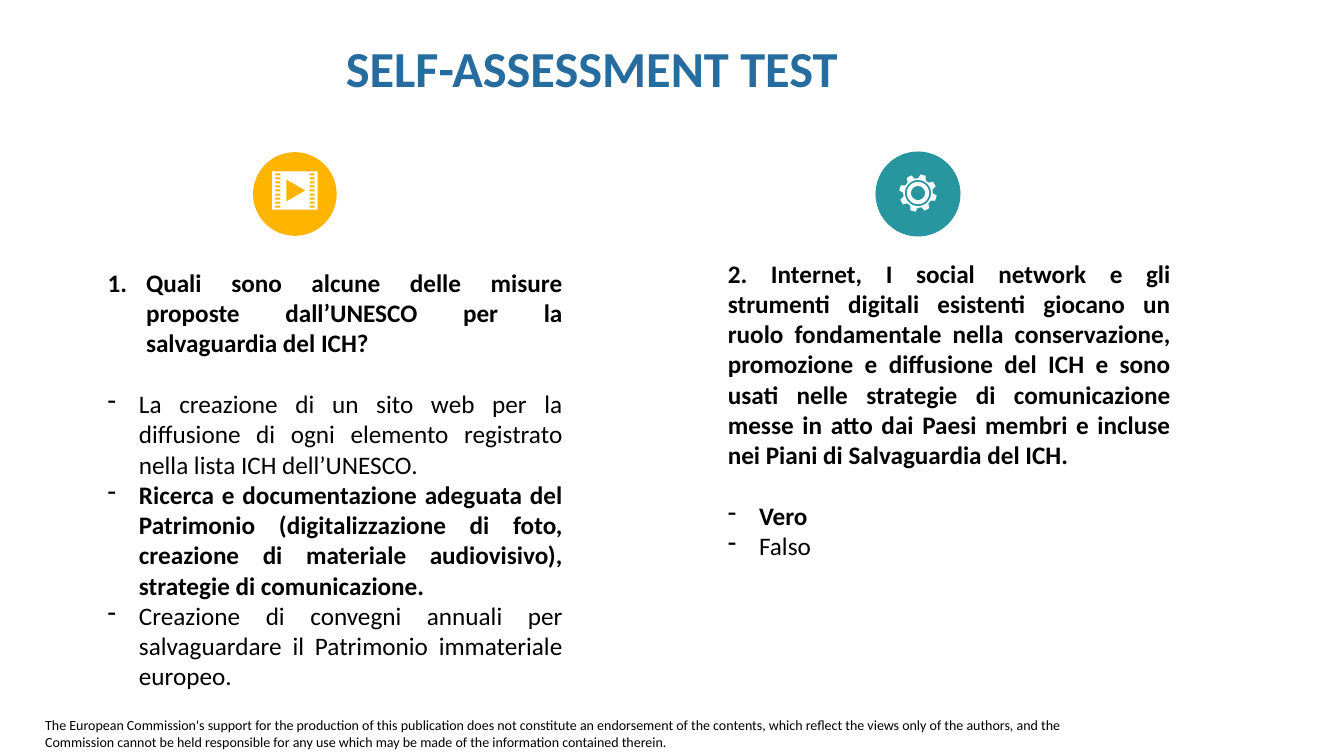
from math import cos, radians, sin

from lxml.etree import SubElement
from pptx import Presentation
from pptx.dml.color import RGBColor
from pptx.enum.shapes import MSO_SHAPE as Preset
from pptx.enum.text import MSO_ANCHOR as Anchor, MSO_AUTO_SIZE as AutoSize, PP_ALIGN as Align
from pptx.oxml.ns import qn
from pptx.util import Pt

PX = 9144
BLACK = RGBColor(0x00, 0x00, 0x00)
WHITE = RGBColor(0xFF, 0xFF, 0xFF)
BLUE = RGBColor(0x26, 0x6C, 0x9F)
AMBER = RGBColor(0xFF, 0xB5, 0x00)
TEAL = RGBColor(0x27, 0x96, 0x9F)

TITLE = "SELF-ASSESSMENT TEST"
DISCLAIMER = (
    "The European Commission's support for the production of this publication does not "
    "constitute an endorsement of the contents, which reflect the views only of the authors, "
    "and the Commission cannot be held responsible for any use which may be made of the "
    "information contained therein."
)
MEASURES_QUESTION = "Quali sono alcune delle misure proposte dall’UNESCO per la salvaguardia del ICH?"
MEASURES_ANSWERS = [
    ("La creazione di un sito web per la diffusione di ogni elemento registrato "
     "nella lista ICH dell’UNESCO.", False),
    ("Ricerca e documentazione adeguata del Patrimonio (digitalizzazione di foto, "
     "creazione di materiale audiovisivo), strategie di comunicazione.", True),
    ("Creazione di convegni annuali per salvaguardare il Patrimonio immateriale europeo.", False),
]
INTERNET_QUESTION = (
    "2. Internet, I social network e gli strumenti digitali esistenti giocano un ruolo "
    "fondamentale nella conservazione, promozione e diffusione del ICH e sono usati nelle "
    "strategie di comunicazione messe in atto dai Paesi membri e incluse nei Piani di "
    "Salvaguardia del ICH."
)
INTERNET_ANSWERS = [("Vero", True), ("Falso", False)]


def emu(*lengths):
    """Turn px lengths into EMU."""
    return [round(length * PX) for length in lengths]


def write(paragraph, text, size=18, bold=False, color=BLACK, align=Align.LEFT,
          bullet=None, indent=0, before=0, spacing=None):
    """Write one formatted paragraph, with a dash or a running number if asked."""
    if bullet:
        properties = paragraph._p.get_or_add_pPr()
        properties.set("marL", str(indent * PX))
        properties.set("indent", str(-indent * PX))
        if bullet == "number":
            SubElement(properties, qn("a:buAutoNum"), type="arabicPeriod")
        else:
            SubElement(properties, qn("a:buChar"), char=bullet)
    paragraph.alignment = align
    if before:
        paragraph.space_before = Pt(before)
    if spacing:
        paragraph.line_spacing = spacing
    run = paragraph.add_run()
    run.text = text
    font = run.font
    font.name, font.size, font.bold = "Calibri", Pt(size), bold
    font.color.rgb = color


def add_title(slide, box):
    """Place the heading in the title placeholder."""
    title = slide.shapes.title
    title.left, title.top, title.width, title.height = emu(*box)
    frame = title.text_frame
    frame.word_wrap = True
    frame.auto_size = AutoSize.NONE
    frame.vertical_anchor = Anchor.MIDDLE
    write(frame.paragraphs[0], TITLE, size=36, bold=True, color=BLUE, spacing=0.9)


def add_question(slide, box, question, answers, numbered=False):
    """Place a question with its dashed answers one blank line below."""
    frame = slide.shapes.add_textbox(*emu(*box)).text_frame
    frame.word_wrap = True
    write(frame.paragraphs[0], question, bold=True, align=Align.JUSTIFY,
          bullet="number" if numbered else None, indent=38)
    for index, (answer, correct) in enumerate(answers):
        write(frame.add_paragraph(), answer, bold=correct, align=Align.JUSTIFY,
              bullet="-", indent=31, before=0 if index else 22)


def add_disc(slide, box, color, outlined=False):
    """Place the coloured disc behind an icon."""
    disc = slide.shapes.add_shape(Preset.OVAL, *emu(*box))
    disc.shadow.inherit = False
    disc.fill.solid()
    disc.fill.fore_color.rgb = color
    if outlined:
        disc.line.color.rgb = color
        disc.line.width = Pt(1)
    else:
        disc.line.fill.background()


def add_icon(slide, left, top, contours):
    """Draw white contours, inner ones as holes, from the given corner."""
    placed = [[emu(left + x, top + y) for x, y in contour] for contour in contours]
    builder = slide.shapes.build_freeform(*placed[0][0])
    for index, contour in enumerate(placed):
        if index:
            builder.move_to(*contour[0])
        builder.add_line_segments(contour[1:], close=True)
    icon = builder.convert_to_shape()
    icon.shadow.inherit = False
    icon.fill.solid()
    icon.fill.fore_color.rgb = WHITE
    icon.line.fill.background()


def rectangle(x, y, width, height):
    """Return the corners of a rectangle."""
    return [(x, y), (x + width, y), (x + width, y + height), (x, y + height)]


def polar(radius, angle):
    """Return the point at a clockwise angle from the top."""
    return radius * sin(radians(angle)), -radius * cos(radians(angle))


def add_film(slide, box):
    """Draw a film strip with two rows of holes and a play mark."""
    left, top, width, height = box
    holes = [rectangle(x, 2 + 4 * row, 5, 2) for x in (3, width - 8) for row in range(9)]
    play = [(14, 8), (33, 19), (14, 30)]
    add_icon(slide, left, top, [rectangle(0, 0, width, height), *holes, play])


def add_gear(slide, box):
    """Draw a gear of eight teeth around a ring."""
    left, top, width, height = box
    corners = [(14.7, -15), (18.7, -8), (18.7, 8), (14.7, 15)]
    teeth = [polar(radius, 16 + 45 * tooth + angle)
             for tooth in range(8) for radius, angle in corners]
    rings = [[polar(radius, angle) for angle in range(0, 360, 10)] for radius in (13, 11, 7)]
    add_icon(slide, left + width / 2, top + height / 2, [teeth, *rings])


def add_disclaimer(slide, box):
    """Place the small print at the foot."""
    frame = slide.shapes.add_textbox(*emu(*box)).text_frame
    frame.word_wrap = True
    frame.auto_size = AutoSize.SHAPE_TO_FIT_TEXT
    write(frame.paragraphs[0], DISCLAIMER, size=10)


def main():
    """Build the self-assessment slide."""
    deck = Presentation()
    deck.slide_width, deck.slide_height = emu(1333, 750)
    slide = deck.slides.add_slide(deck.slide_layouts[5])
    add_disclaimer(slide, (35, 706, 1046, 44))
    add_question(slide, (97, 260, 471, 51), MEASURES_QUESTION, MEASURES_ANSWERS, numbered=True)
    add_disc(slide, (251, 151, 83, 83), AMBER)
    add_film(slide, (270, 170, 45, 38))
    add_question(slide, (712, 251, 459, 20), INTERNET_QUESTION, INTERNET_ANSWERS)
    add_disc(slide, (869, 151, 83, 83), TEAL, outlined=True)
    add_gear(slide, (892, 173, 37, 37))
    add_title(slide, (333, 31, 947, 79))
    deck.save("out.pptx")


if __name__ == "__main__":
    main()
